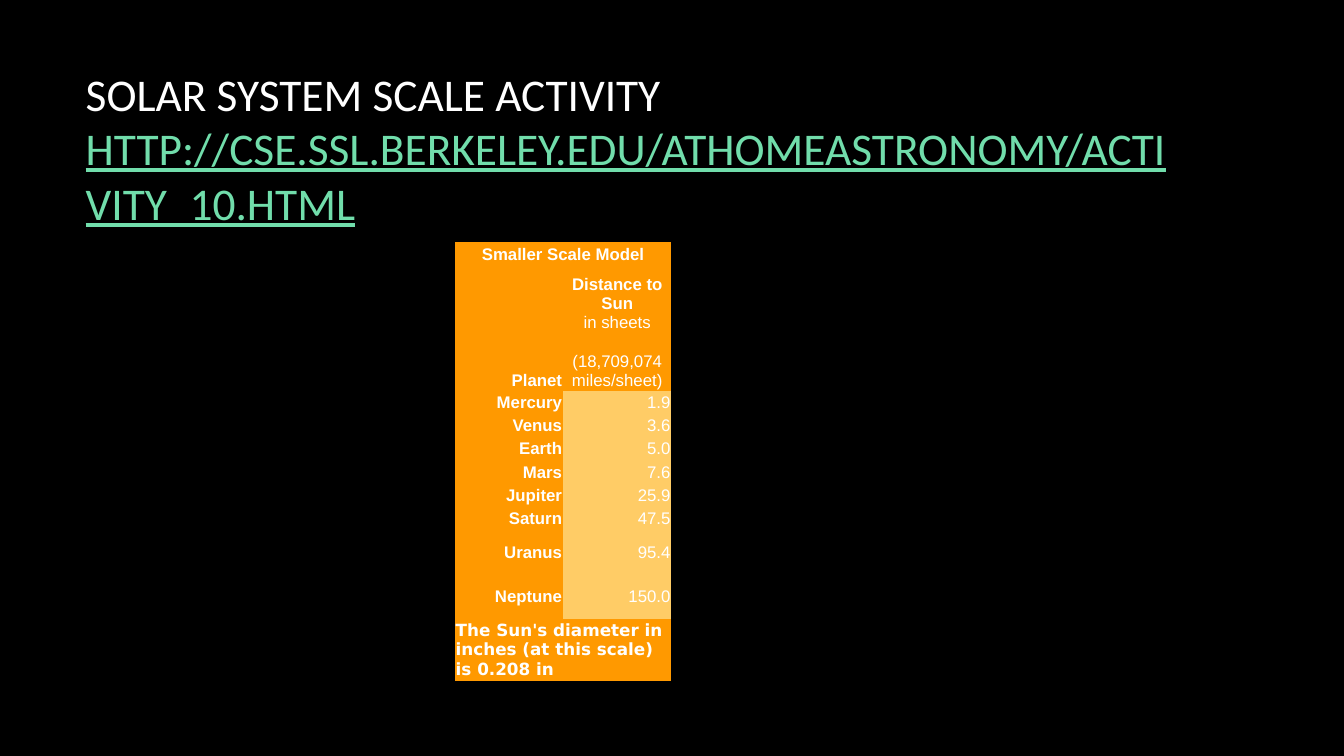
"""Build the solar system scale activity slide."""
from dataclasses import dataclass

from lxml.etree import SubElement
from pptx import Presentation
from pptx.dml.color import RGBColor
from pptx.enum.text import MSO_ANCHOR as Anchor, MSO_AUTO_SIZE as AutoSize, PP_ALIGN as Align
from pptx.oxml.ns import qn
from pptx.util import Inches, Pt


@dataclass(frozen=True)
class Theme:
    """Colours, fonts and type sizes of the slide."""
    background: str = "000000"
    text: str = "FFFFFF"
    link: str = "71DDAB"
    label_fill: str = "FF9900"
    value_fill: str = "FFCC66"
    title_font: str = "Calibri"
    table_font: str = "Arial"
    note_font: str = "DejaVu Sans"
    title_size: float = 32.4
    table_size: float = 12


THEME = Theme()


@dataclass(frozen=True)
class Look:
    """Character formatting of one run."""
    font: str = THEME.table_font
    size: float = THEME.table_size
    color: str = THEME.text
    bold: bool = False
    underline: bool = False


PLAIN = Look()
BOLD = Look(bold=True)
NOTE = Look(THEME.note_font, bold=True)
TITLE = Look(THEME.title_font, THEME.title_size)
LINK = Look(THEME.title_font, THEME.title_size, THEME.link, underline=True)


@dataclass(frozen=True)
class CellText:
    """Text, run looks and placement of one table cell."""
    text: str
    looks: tuple[Look, ...] = (BOLD,)
    align: Align = Align.RIGHT
    anchor: Anchor = Anchor.MIDDLE
    fill: str = THEME.label_fill


@dataclass(frozen=True)
class Row:
    """Height and cells of one table row; a single cell spans the row."""
    height: float
    cells: tuple[CellText, ...]


@dataclass(frozen=True)
class Planet:
    """Planet with its distance to the Sun in sheets."""
    name: str
    sheets: str
    height: float = 0.23


PLANETS = (
    Planet("Mercury", "1.9"),
    Planet("Venus", "3.6"),
    Planet("Earth", "5.0"),
    Planet("Mars", "7.6"),
    Planet("Jupiter", "25.9"),
    Planet("Saturn", "47.5"),
    Planet("Uranus", "95.4", 0.44),
    Planet("Neptune", "150.0", 0.44),
)
ROWS = (
    Row(0.23, (CellText("Smaller Scale Model", align=Align.CENTER, anchor=Anchor.BOTTOM),)),
    Row(1.25, (
        CellText("Planet", anchor=Anchor.BOTTOM),
        CellText("Distance to Sun\vin sheets\v\v(18,709,074 miles/sheet)",
                 (BOLD, PLAIN, PLAIN), Align.CENTER, Anchor.BOTTOM),
    )),
    *(Row(planet.height, (
        CellText(planet.name),
        CellText(planet.sheets, (PLAIN,), fill=THEME.value_fill),
    )) for planet in PLANETS),
    Row(0.62, (CellText("The Sun's diameter in inches (at this scale) is 0.208 in",
                        (NOTE,), Align.LEFT),)),
)
TITLE_TEXT = ("SOLAR SYSTEM SCALE ACTIVITY\v"
              "HTTP://CSE.SSL.BERKELEY.EDU/ATHOMEASTRONOMY/ACTIVITY_10.HTML")


def write_text(frame, text: str, looks: tuple[Look, ...], align: Align) -> None:
    """Write one paragraph and format its runs and line breaks."""
    frame.text = text
    para = frame.paragraphs[0]
    para.alignment = align
    for span, look in zip(para.runs, looks):
        span.font.name = look.font
        span.font.size = Pt(look.size)
        span.font.bold = look.bold
        span.font.underline = look.underline
        span.font.color.rgb = RGBColor.from_string(look.color)
    for line_break in para._p.findall(qn("a:br")):
        SubElement(line_break, qn("a:rPr"), sz=str(round(looks[0].size * 100)))


def add_title(page) -> None:
    """Place and fill the title."""
    title = page.shapes.title
    title.left, title.top = Inches(0.75), Inches(0.67)
    title.width, title.height = Inches(11.08), Inches(1.59)
    frame = title.text_frame
    frame.word_wrap = True
    frame.auto_size = AutoSize.NONE
    frame.vertical_anchor = Anchor.MIDDLE
    write_text(frame, TITLE_TEXT, (TITLE, LINK), Align.LEFT)


def fill_cell(cell, content: CellText) -> None:
    """Format one table cell and write its text."""
    cell.fill.solid()
    cell.fill.fore_color.rgb = RGBColor.from_string(content.fill)
    cell.margin_left = cell.margin_right = Inches(0.01)
    cell.margin_top = cell.margin_bottom = Inches(0.01)
    cell.vertical_anchor = content.anchor
    write_text(cell.text_frame, content.text, content.looks, content.align)


def add_planet_table(page) -> None:
    """Add the borderless table of planet distances."""
    height = sum(row.height for row in ROWS)
    table = page.shapes.add_table(len(ROWS), 2, Inches(4.51), Inches(2.4),
                                  Inches(2.15), Inches(height)).table
    table.first_row = table.horz_banding = False
    style = table._tbl.tblPr.find(qn("a:tableStyleId"))
    style.text = "{2D5ABB26-0587-4C30-8999-92F81FD0307C}"
    for index, row in enumerate(ROWS):
        table.rows[index].height = Inches(row.height)
        if len(row.cells) == 1:
            table.cell(index, 0).merge(table.cell(index, 1))
        for column, content in enumerate(row.cells):
            fill_cell(table.cell(index, column), content)


def main() -> None:
    """Build and save the deck."""
    deck = Presentation()
    deck.slide_width, deck.slide_height = Inches(13.33), Inches(7.5)
    page = deck.slides.add_slide(deck.slide_layouts[5])
    page.background.fill.solid()
    page.background.fill.fore_color.rgb = RGBColor.from_string(THEME.background)
    add_title(page)
    add_planet_table(page)
    deck.save("out.pptx")


if __name__ == "__main__":
    main()
